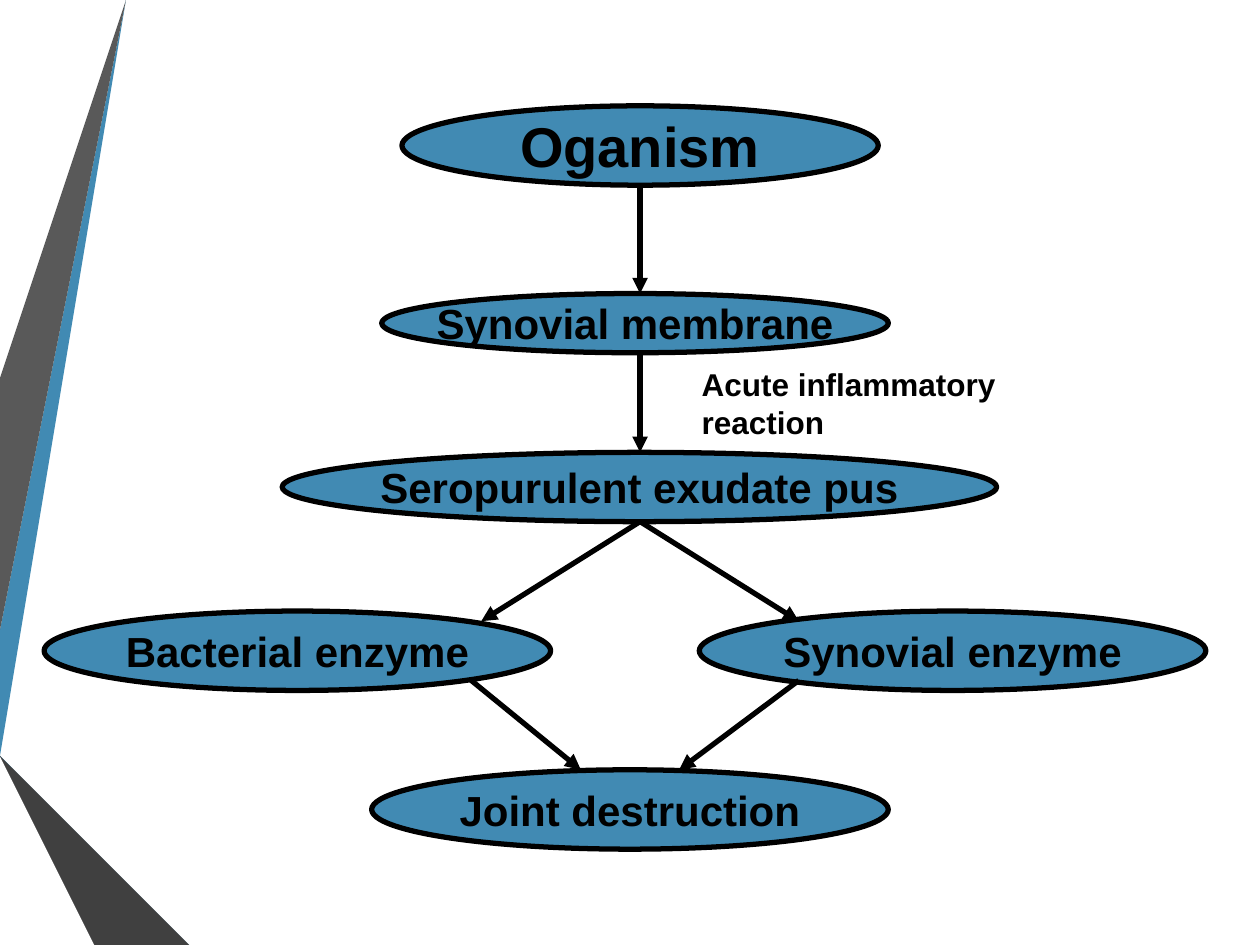
from pptx import Presentation
from pptx.dml.color import RGBColor
from pptx.enum.shapes import MSO_CONNECTOR, MSO_SHAPE
from pptx.enum.text import MSO_ANCHOR, PP_ALIGN
from pptx.oxml.ns import qn
from pptx.util import Inches, Pt
from lxml.etree import SubElement

HUES = {
    "blue": "418AB3", "navy": "316886", "deep": "20455A",
    "gray": "595959", "coal": "404040", "soot": "262626", "ink": "000000",
}

# Ribbons on the left edge, back to front: colour, corners
BANDS = [
    ("blue", [(0, 5.44), (0, 5.75), (0.22, 5.79), (1.17, 0), (0.89, 0)]),
    ("gray", [(0.83, 0), (0.55, 0), (0, 3.36), (0, 5.06)]),
    ("soot", [(0, 6.19), (0, 6.21), (0.93, 7.5), (0.99, 7.5)]),
    ("deep", [(0, 5.79), (0, 5.8), (1.56, 7.5), (1.63, 7.5)]),
    ("navy", [(0, 5.79), (1.63, 7.5), (2.33, 7.5), (0.22, 5.79), (0, 5.75)]),
    ("coal", [(0, 6.19), (0.99, 7.5), (1.51, 7.5), (0, 5.86)]),
]

# Steps of the disease: text, left, top, width, height, text size
STEPS = [
    ("Oganism", 3.19, 0.84, 3.78, 0.63, 32),
    ("Synovial membrane", 3.03, 2.33, 4.02, 0.47, 24),
    ("Seropurulent exudate pus", 2.24, 3.59, 5.67, 0.55, 24),
    ("Bacterial enzyme", 0.35, 4.85, 4.02, 0.63, 24),
    ("Synovial enzyme", 5.55, 4.85, 4.02, 0.63, 24),
    ("Joint destruction", 2.95, 6.11, 4.1, 0.63, 24),
]

AXIS = 5.08
ARROWS = [
    ((AXIS, 1.47), (AXIS, 2.33)),
    ((AXIS, 2.81), (AXIS, 3.59)),
    ((AXIS, 4.14), (3.82, 4.93)),
    ((AXIS, 4.14), (6.34, 4.93)),
    ((3.74, 5.4), (4.61, 6.11)),
    ((6.34, 5.4), (5.39, 6.11)),
]


def color(name):
    return RGBColor.from_string(HUES[name])


class Chart:
    """Draws the parts of a flow chart on one slide in one style."""

    font = "Arial"
    stroke = Pt(3)

    def __init__(self, slide):
        self.slide = slide
        self.shapes = slide.shapes

    def band(self, hue, points):
        pen = self.shapes.build_freeform(*points[0], scale=Inches(1))
        pen.add_line_segments(points[1:], close=True)
        shape = pen.convert_to_shape()
        shape.shadow.inherit = False
        shape.fill.solid()
        shape.fill.fore_color.rgb = color(hue)
        shape.line.fill.background()

    def letter(self, shape, text, size, align):
        """Put bold text into a shape."""
        frame = shape.text_frame
        frame.text = text
        frame.word_wrap = False
        frame.vertical_anchor = MSO_ANCHOR.MIDDLE
        for par in frame.paragraphs:
            par.alignment = align
            for run in par.runs:
                run.font.name = self.font
                run.font.size = Pt(size)
                run.font.bold = True
                run.font.color.rgb = color("ink")

    def step(self, text, left, top, width, height, size):
        oval = self.shapes.add_shape(
            MSO_SHAPE.OVAL, *map(Inches, (left, top, width, height)))
        oval.shadow.inherit = False
        oval.fill.solid()
        oval.fill.fore_color.rgb = color("blue")
        oval.line.color.rgb = color("ink")
        oval.line.width = self.stroke
        self.letter(oval, text, size, PP_ALIGN.CENTER)

    def label(self, text, left, top, width, height, size):
        box = self.shapes.add_textbox(
            *map(Inches, (left, top, width, height)))
        self.letter(box, text, size, PP_ALIGN.LEFT)

    def arrow(self, start, end):
        line = self.shapes.add_connector(
            MSO_CONNECTOR.STRAIGHT, *map(Inches, start + end))
        line.line.color.rgb = color("ink")
        line.line.width = self.stroke
        props = line.element.spPr
        SubElement(props.get_or_add_ln(), qn("a:tailEnd"), type="triangle")
        SubElement(props, qn("a:effectLst"))


def main():
    deck = Presentation()
    deck.slide_width, deck.slide_height = Inches(10), Inches(7.5)
    chart = Chart(deck.slides.add_slide(deck.slide_layouts[6]))
    for band in BANDS:
        chart.band(*band)
    for step in STEPS:
        chart.step(*step)
    chart.label("Acute inflammatory\nreaction", 5.47, 2.96, 2.91, 0.47, 18)
    for arrow in ARROWS:
        chart.arrow(*arrow)
    deck.save("out.pptx")


if __name__ == "__main__":
    main()
